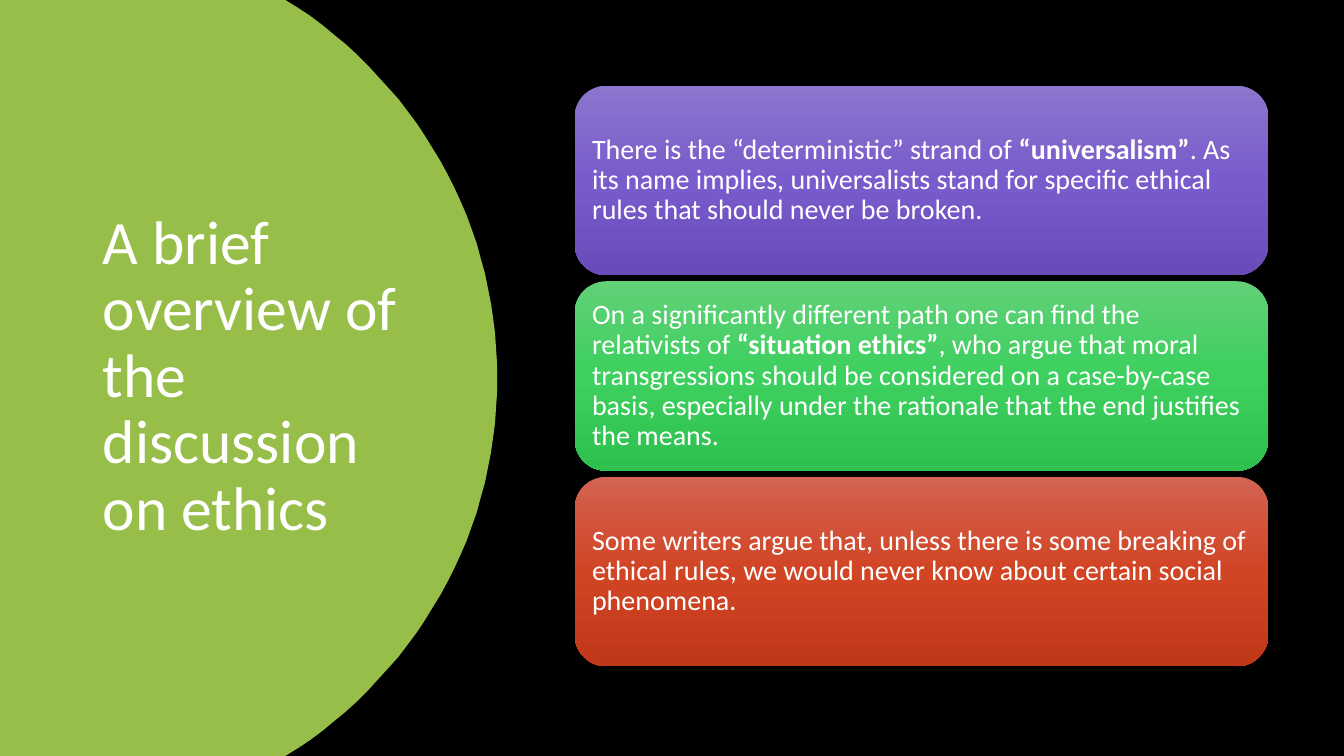
import copy
import dataclasses
import math

import pptx
import pptx.dml.color
import pptx.enum.shapes
import pptx.enum.text
import pptx.oxml.ns
import pptx.util

PX = 9144
SLIDE_WIDTH, SLIDE_HEIGHT = 1333, 750


@dataclasses.dataclass(frozen=True)
class Theme:
    font: str = "Calibri"
    title_size: int = 44
    body_size: int = 20
    line_spacing: float = 0.9
    background: str = "000000"
    text: str = "FFFFFF"
    accent: str = "97BE49"
    universalism: tuple = ("8B75CD", "7A5BCB", "6A4BBA")
    situation: tuple = ("61D077", "3DD05F", "2FC150")
    writers: tuple = ("D36353", "D14424", "C13819")


def rgb(value):
    return pptx.dml.color.RGBColor.from_string(value)


def set_text(frame, runs, *, size, color, font, spacing, inset):
    frame.word_wrap = True
    frame.auto_size = pptx.enum.text.MSO_AUTO_SIZE.NONE
    frame.vertical_anchor = pptx.enum.text.MSO_ANCHOR.MIDDLE
    frame.margin_left = frame.margin_right = inset * PX
    frame.margin_top = frame.margin_bottom = inset * PX
    paragraph = frame.paragraphs[0]
    paragraph.alignment = pptx.enum.text.PP_ALIGN.LEFT
    paragraph.line_spacing = spacing
    for words, bold in runs:
        run = paragraph.add_run()
        run.text = words
        run.font.name = font
        run.font.size = pptx.util.Pt(size)
        run.font.bold = bold
        run.font.color.rgb = rgb(color)


class SlideBuilder:
    def __init__(self, slide, theme):
        self.slide = slide
        self.theme = theme
        slide.background.fill.solid()
        slide.background.fill.fore_color.rgb = rgb(theme.background)

    def themed_text(self, frame, runs, size, inset):
        set_text(frame, runs, size=size, color=self.theme.text, font=self.theme.font,
                 spacing=self.theme.line_spacing, inset=inset)

    def arc_panel(self, edge, bulge, steps=60):
        half = SLIDE_HEIGHT / 2
        depth = bulge - edge
        radius = (half ** 2 + depth ** 2) / (2 * depth)
        sweep = math.asin(half / radius)
        angles = [sweep * (2 * step / steps - 1) for step in range(steps + 1)]
        curve = [(bulge - radius + radius * math.cos(angle), half + radius * math.sin(angle))
                 for angle in angles]
        outline = self.slide.shapes.build_freeform(0, 0, scale=PX)
        outline.add_line_segments(curve + [(0, SLIDE_HEIGHT)], close=True)
        panel = outline.convert_to_shape()
        panel.shadow.inherit = False
        panel.fill.solid()
        panel.fill.fore_color.rgb = rgb(self.theme.accent)
        panel.line.fill.background()

    def title(self, words, left, top, width, height):
        heading = self.slide.shapes.title
        heading.left, heading.top = left * PX, top * PX
        heading.width, heading.height = width * PX, height * PX
        self.themed_text(heading.text_frame, [(words, False)], self.theme.title_size, inset=10)
        heading._element.getparent().append(heading._element)

    def card(self, runs, colors, left, top, width, height):
        card = self.slide.shapes.add_shape(
            pptx.enum.shapes.MSO_SHAPE.ROUNDED_RECTANGLE,
            left * PX, top * PX, width * PX, height * PX)
        card.shadow.inherit = False
        card.line.fill.background()
        self.gradient(card, colors)
        self.themed_text(card.text_frame, runs, self.theme.body_size, inset=8)

    def gradient(self, shape, colors):
        shape.fill.gradient()
        shape.fill.gradient_angle = 270
        stops = shape._element.spPr.find(".//" + pptx.oxml.ns.qn("a:gsLst"))
        stops.insert(1, copy.deepcopy(stops[0]))
        for index, (stop, color) in enumerate(zip(shape.fill.gradient_stops, colors)):
            stop.position = index / (len(colors) - 1)
            stop.color.rgb = rgb(color)


def main():
    theme = Theme()
    deck = pptx.Presentation()
    deck.slide_width, deck.slide_height = SLIDE_WIDTH * PX, SLIDE_HEIGHT * PX
    builder = SlideBuilder(deck.slides.add_slide(deck.slide_layouts[5]), theme)

    builder.arc_panel(edge=283, bulge=493)
    builder.title("A brief overview of the discussion on ethics", 92, 70, 323, 609)

    strands = [
        (theme.universalism, [
            ("There is the “deterministic” strand of ", False),
            ("“universalism”", True),
            (". As its name implies, universalists stand for specific ethical rules "
             "that should never be broken.", False)]),
        (theme.situation, [
            ("On a significantly different path one can find the relativists of ", False),
            ("“situation ethics”", True),
            (", who argue that moral transgressions should be considered on a case-by-case "
             "basis, especially under the rationale that the end justifies the means.", False)]),
        (theme.writers, [
            ("Some writers argue that, unless there is some breaking of ethical rules, "
             "we would never know about certain social phenomena.", False)]),
    ]
    card_height, gap = 188, 6
    for row, (colors, runs) in enumerate(strands):
        builder.card(runs, colors, 570, 85 + row * (card_height + gap), 688, card_height)

    deck.save("out.pptx")


if __name__ == "__main__":
    main()
